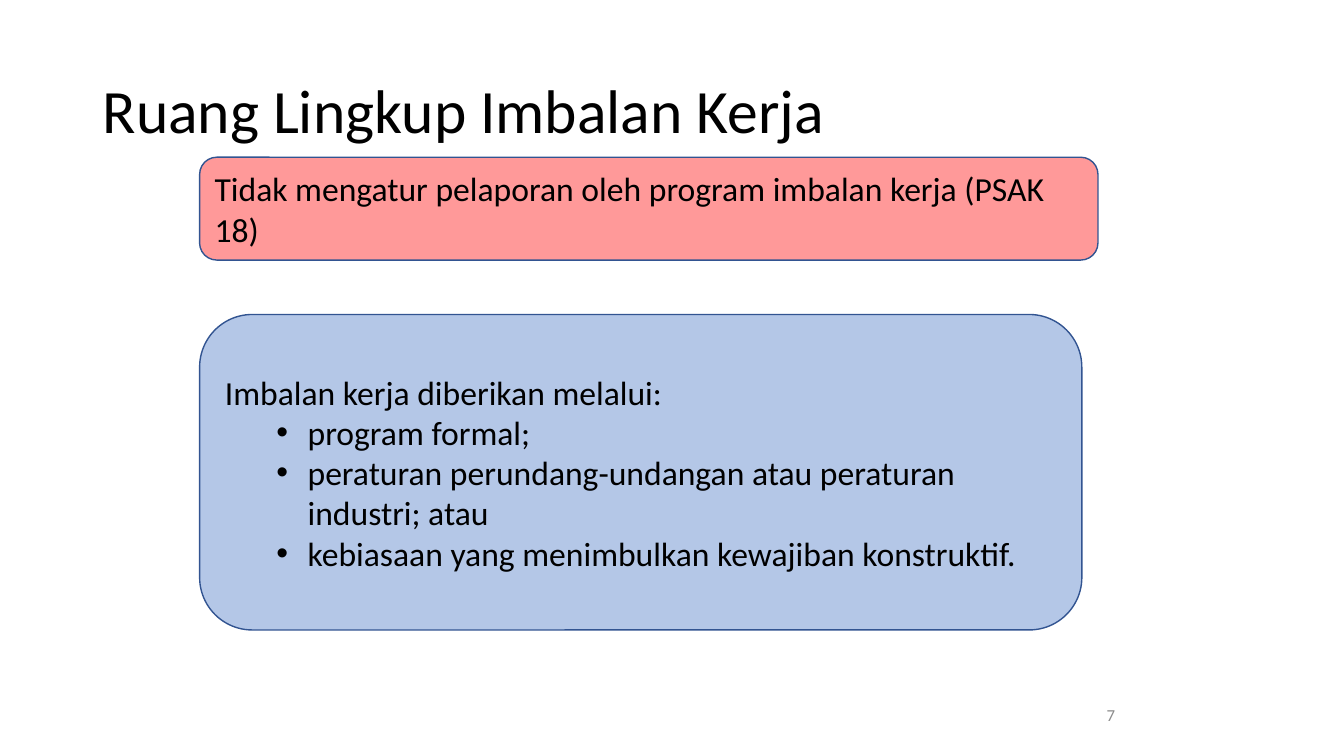
from pptx import Presentation
from pptx.dml.color import RGBColor
from pptx.enum.shapes import MSO_SHAPE
from pptx.enum.text import MSO_ANCHOR, PP_ALIGN
from pptx.oxml import parse_xml
from pptx.oxml.ns import nsdecls
from pptx.util import Inches, Pt


def color(hex_value):
    return RGBColor.from_string(hex_value)


def write(shape, lines, size, hex_value="000000", align=PP_ALIGN.LEFT):
    frame = shape.text_frame
    frame.word_wrap = True
    frame.vertical_anchor = MSO_ANCHOR.MIDDLE
    frame.text = "\n".join(lines)
    for paragraph in frame.paragraphs:
        paragraph.alignment = align
        paragraph.font.name = "Calibri"
        paragraph.font.size = Pt(size)
        paragraph.font.color.rgb = color(hex_value)
    return frame.paragraphs


presentation = Presentation()
presentation.slide_width = Inches(13.33)
presentation.slide_height = Inches(7.5)
slide = presentation.slides.add_slide(presentation.slide_layouts[6])

# Title and page number
title = slide.shapes.add_textbox(Inches(0.92), Inches(0.4), Inches(11.5), Inches(1.45))
write(title, ["Ruang Lingkup Imbalan Kerja"], 44)[0].line_spacing = 0.9
page_number = slide.shapes.add_textbox(Inches(8.83), Inches(6.83), Inches(2.33), Inches(0.52))
write(page_number, ["7"], 12, "8C8C8C", PP_ALIGN.RIGHT)

# Exclusion and scope panels: top, width, height, fill, lines
exclusion = ["Tidak mengatur pelaporan oleh program imbalan kerja (PSAK 18)"]
scope = [
    "Imbalan kerja diberikan melalui:",
    "program formal;",
    "peraturan perundang-undangan atau peraturan industri; atau",
    "kebiasaan yang menimbulkan kewajiban konstruktif.",
]
panels = [
    (1.56, 8.91, 1.02, "FF9999", exclusion),
    (3.12, 8.75, 3.13, "B4C7E7", scope),
]
for top, width, height, fill, lines in panels:
    panel = slide.shapes.add_shape(
        MSO_SHAPE.ROUNDED_RECTANGLE, Inches(1.98), Inches(top), Inches(width), Inches(height))
    panel.shadow.inherit = False
    panel.fill.solid()
    panel.fill.fore_color.rgb = color(fill)
    panel.line.color.rgb = color("325491")
    panel.line.width = Pt(1)
    # Every line after the first is a bulleted item
    for item in write(panel, lines, 24)[1:]:
        item.level = 1
        properties = item._p.get_or_add_pPr()
        properties.set("marL", str(Inches(0.82)))
        properties.set("indent", str(Inches(-0.31)))
        bullet_font = parse_xml(f'<a:buFont {nsdecls("a")} typeface="Arial"/>')
        bullet = parse_xml(f'<a:buChar {nsdecls("a")} char="•"/>')
        properties.insert_element_before(bullet_font, "a:tabLst", "a:defRPr", "a:extLst")
        properties.insert_element_before(bullet, "a:tabLst", "a:defRPr", "a:extLst")

presentation.save("out.pptx")
